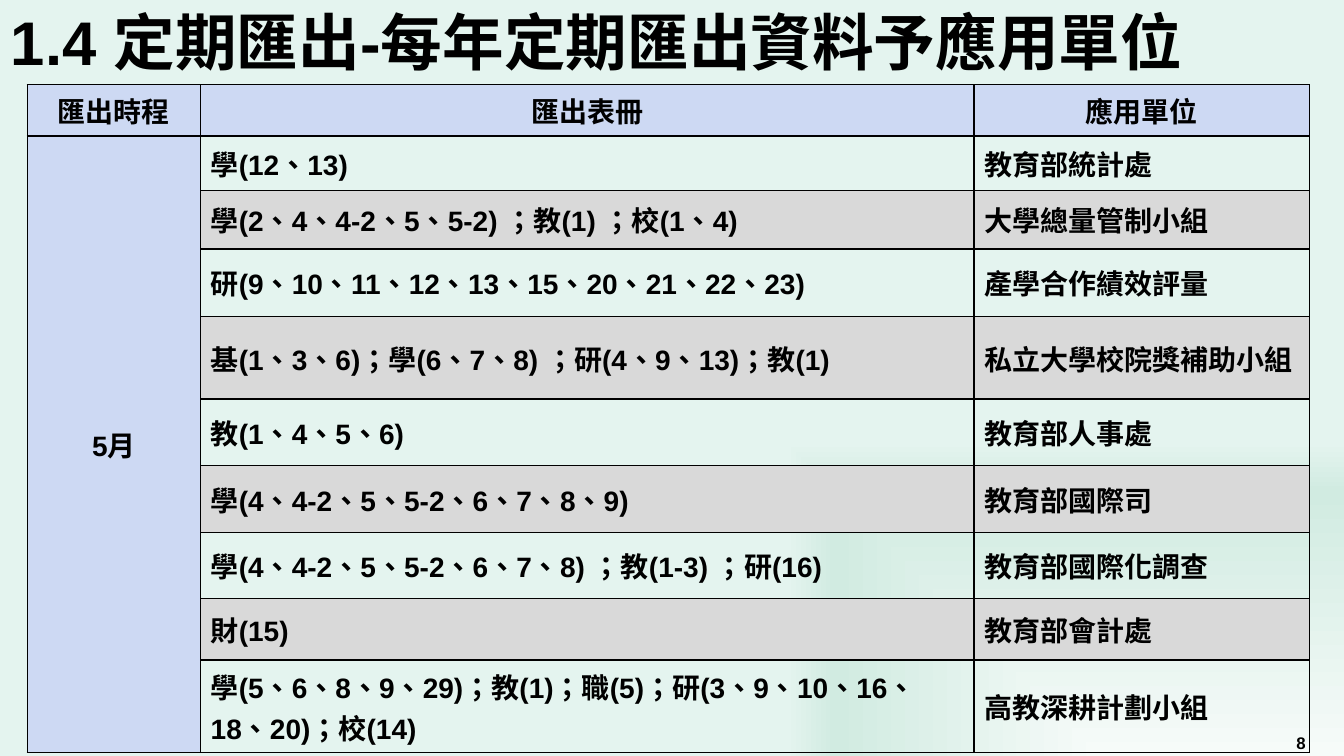
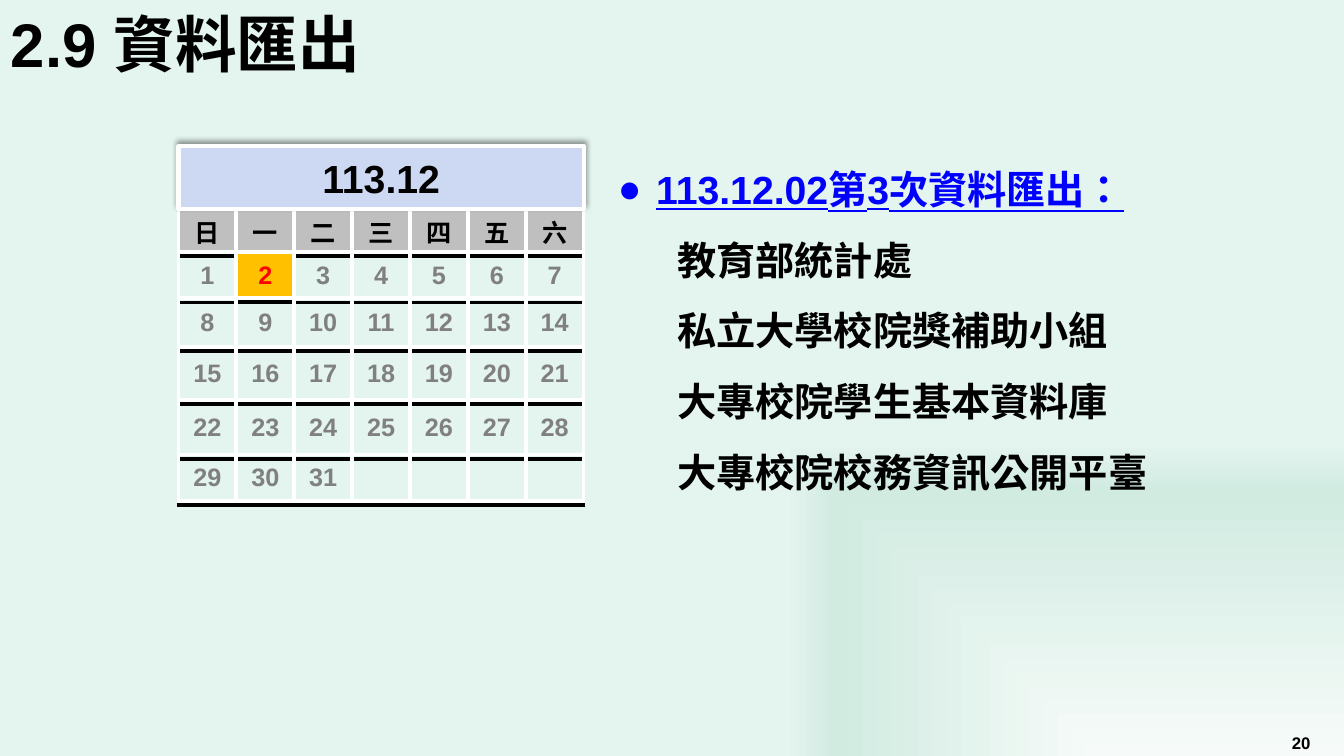
from lxml import etree
from pptx import Presentation
from pptx.dml.color import RGBColor
from pptx.enum.shapes import MSO_SHAPE
from pptx.enum.text import MSO_ANCHOR, MSO_AUTO_SIZE, PP_ALIGN
from pptx.oxml import parse_xml
from pptx.oxml.ns import qn
from pptx.util import Inches, Pt

CENTER, LEFT = PP_ALIGN.CENTER, PP_ALIGN.LEFT
MIDDLE, TOP = MSO_ANCHOR.MIDDLE, MSO_ANCHOR.TOP
GROW = MSO_AUTO_SIZE.SHAPE_TO_FIT_TEXT
RECTANGLE = MSO_SHAPE.RECTANGLE

LATIN, CJK = "Arial", "Noto Sans CJK SC"
BLACK, WHITE, BLUE, RED = "000000", "FFFFFF", "0000FF", "FF0000"
LAVENDER, BAND, WEEKDAY, DAY, MARKED = "CDD9F3", "D9D9D9", "BFBFBF", "808080", "FFC000"
GRADIENT = [(0, "F6FBF9"), (70, "D1EBE1"), (83, "E4F4EF"), (100, "E4F4EF")]
NO_STYLE = "{2D5ABB26-0587-4C30-8999-92F81FD0307C}"
XMLNS = 'xmlns:a="http://schemas.openxmlformats.org/drawingml/2006/main"'
DAY_INSETS = (0.01, 0.01, 0.01, 0)

EXPORTS = [
    ("學(12、13)", "教育部統計處"),
    ("學(2、4、4-2、5、5-2) ；教(1) ；校(1、4)", "大學總量管制小組"),
    ("研(9、10、11、12、13、15、20、21、22、23)", "產學合作績效評量"),
    ("基(1、3、6)；學(6、7、8) ；研(4、9、13)；教(1)", "私立大學校院獎補助小組"),
    ("教(1、4、5、6)", "教育部人事處"),
    ("學(4、4-2、5、5-2、6、7、8、9)", "教育部國際司"),
    ("學(4、4-2、5、5-2、6、7、8) ；教(1-3) ；研(16)", "教育部國際化調查"),
    ("財(15)", "教育部會計處"),
    ("學(5、6、8、9、29)；教(1)；職(5)；研(3、9、10、16、18、20)；校(14)", "高教深耕計劃小組"),
]
RECIPIENTS = ["教育部統計處", "私立大學校院獎補助小組", "大專校院學生基本資料庫", "大專校院校務資訊公開平臺"]


def rgb(value):
    return RGBColor.from_string(value)


def write(paragraph, text, size=20, color=BLACK, font=LATIN, align=LEFT, spacing=None, underline=False):
    paragraph.alignment = align
    if spacing:
        paragraph.line_spacing = spacing
    run = paragraph.add_run()
    run.text = text
    run.font.size = Pt(size)
    run.font.bold = True
    run.font.underline = underline
    run.font.name = font
    run.font.color.rgb = rgb(color)
    properties = run.font._element
    properties.set("lang", "zh-TW")
    properties.find(qn("a:latin")).addnext(parse_xml(f'<a:ea {XMLNS} typeface="{CJK}"/>'))


def shadow_xml(blur, distance, direction, alpha):
    return (f'<a:outerShdw {XMLNS} blurRad="{Pt(blur)}" dist="{Pt(distance)}" dir="{direction * 60000}" '
            f'algn="ctr" rotWithShape="0"><a:srgbClr val="{BLACK}"><a:alpha val="{alpha * 1000}"/>'
            '</a:srgbClr></a:outerShdw>')


class Deck:
    def __init__(self):
        self.prs = Presentation()
        self.prs.slide_width, self.prs.slide_height = Inches(13.33), Inches(7.5)
        self.slide = None
        self.paint_background()

    def paint_background(self):
        master = self.prs.slide_master
        master.background.fill.solid()
        solid = master.element.find(".//" + qn("p:bgPr")).find(qn("a:solidFill"))
        stops = "".join(f'<a:gs pos="{at * 1000}"><a:srgbClr val="{color}"/></a:gs>' for at, color in GRADIENT)
        solid.getparent().replace(solid, parse_xml(
            f'<a:gradFill {XMLNS} rotWithShape="1"><a:gsLst>{stops}</a:gsLst><a:path path="rect">'
            '<a:fillToRect l="100000" t="100000"/></a:path></a:gradFill>'))

    def add_slide(self, title, number, title_top):
        self.slide = self.prs.slides.add_slide(self.prs.slide_layouts[6])
        write(self.text_frame(0.01, title_top, 13.32, 0.67, MIDDLE).paragraphs[0], title, size=44, spacing=0.9)
        write(self.text_frame(12.48, 7.22, 0.85, 0.28).paragraphs[0], number, size=12, align=CENTER)

    def text_frame(self, left, top, width, height, anchor=TOP):
        box = self.slide.shapes.add_textbox(Inches(left), Inches(top), Inches(width), Inches(height))
        box.text_frame.word_wrap = True
        box.text_frame.vertical_anchor = anchor
        return box.text_frame

    def bullet_list(self, left, top, width, height, heading, items):
        frame = self.text_frame(left, top, width, height)
        frame.auto_size = GROW
        first = frame.paragraphs[0]
        self.indent(first, 0.38, -0.38)
        properties = first._p.get_or_add_pPr()
        etree.SubElement(properties, qn("a:buFont")).set("typeface", LATIN)
        etree.SubElement(properties, qn("a:buChar")).set("char", "●")
        write(first, heading, size=28, color=BLUE, spacing=1.5, underline=True)
        for item in items:
            paragraph = frame.add_paragraph()
            self.indent(paragraph, 0.59, 0)
            write(paragraph, item, size=28, spacing=1.5)

    def indent(self, paragraph, margin, first_line):
        properties = paragraph._p.get_or_add_pPr()
        properties.set("marL", str(Inches(margin)))
        properties.set("indent", str(Inches(first_line)))

    def banner(self, left, top, width, height, text):
        shape = self.slide.shapes.add_shape(RECTANGLE, Inches(left), Inches(top), Inches(width), Inches(height))
        shape.fill.solid()
        shape.fill.fore_color.rgb = rgb(LAVENDER)
        shape.line.color.rgb = rgb(WHITE)
        shape.line.width = Pt(3)
        shape.shadow.inherit = False
        shape._element.spPr.find(qn("a:effectLst")).append(parse_xml(shadow_xml(4, 3, 270, 40)))
        shape.text_frame.vertical_anchor = MIDDLE
        write(shape.text_frame.paragraphs[0], text, size=28, align=CENTER)

    def table(self, left, top, columns, rows, shadow=False):
        frame = self.slide.shapes.add_table(len(rows), len(columns), Inches(left), Inches(top),
                                            Inches(sum(columns)), Inches(sum(rows)))
        table = frame.table
        table.first_row = table.horz_banding = False
        properties = table._tbl.tblPr
        properties.find(qn("a:tableStyleId")).text = NO_STYLE
        if shadow:
            properties.insert(0, parse_xml(
                f'<a:effectLst {XMLNS}>{shadow_xml(0, 3, 90, 100)}</a:effectLst>'))
        for column, width in zip(table.columns, columns):
            column.width = Inches(width)
        for row, height in zip(table.rows, rows):
            row.height = Inches(height)
        return table

    def cell(self, cell, text="", fill=None, border=BLACK, border_width=1, insets=(0.1, 0.05, 0.1, 0.05), **style):
        cell.vertical_anchor = MIDDLE
        cell.margin_left, cell.margin_top, cell.margin_right, cell.margin_bottom = map(Inches, insets)
        if fill:
            cell.fill.solid()
            cell.fill.fore_color.rgb = rgb(fill)
        else:
            cell.fill.background()
        for position, side in enumerate(("lnL", "lnR", "lnT", "lnB")):
            cell._tc.get_or_add_tcPr().insert(position, parse_xml(
                f'<a:{side} {XMLNS} w="{Pt(border_width)}"><a:solidFill><a:srgbClr val="{border}"/>'
                f'</a:solidFill></a:{side}>'))
        if text:
            write(cell.text_frame.paragraphs[0], text, **style)


def export_slide(deck):
    deck.add_slide("1.4 定期匯出-每年定期匯出資料予應用單位", "8", 0.12)
    table = deck.table(0.27, 0.84, [1.72, 7.67, 3.33],
                       [0.51, 0.54, 0.58, 0.67, 0.82, 0.66, 0.66, 0.66, 0.61, 0.92])
    for column, heading in enumerate(("匯出時程", "匯出表冊", "應用單位")):
        deck.cell(table.cell(0, column), heading, LAVENDER, align=CENTER)
    for row, entry in enumerate(EXPORTS, 1):
        deck.cell(table.cell(row, 0), "5月" if row == 1 else "", LAVENDER, align=CENTER)
        for column, text in enumerate(entry, 1):
            deck.cell(table.cell(row, column), text, None if row % 2 else BAND)
    table.cell(1, 0).merge(table.cell(len(EXPORTS), 0))


def calendar_slide(deck):
    deck.add_slide("2.9 資料匯出", "20", 0.14)
    deck.bullet_list(6.03, 1.36, 5.59, 3.64, "113.12.02第3次資料匯出：", RECIPIENTS)
    calendar = deck.table(1.77, 2.07, [4.02 / 7] * 7, [0.43, 0.46, 0.48, 0.53, 0.54, 0.46], shadow=True)
    grid = dict(border=WHITE, border_width=3, size=18, align=CENTER)
    for column, weekday in enumerate("日一二三四五六"):
        deck.cell(calendar.cell(0, column), weekday, WEEKDAY, font=CJK, **grid)
    for index in range(35):
        day = index + 1
        export_day = day == 2
        deck.cell(calendar.cell(1 + index // 7, index % 7), str(day) if day <= 31 else "",
                  MARKED if export_day else None, insets=DAY_INSETS,
                  color=RED if export_day else DAY, **grid)
    deck.banner(1.77, 1.45, 4.02, 0.62, "113.12")


def main():
    deck = Deck()
    export_slide(deck)
    calendar_slide(deck)
    deck.prs.save("out.pptx")


if __name__ == "__main__":
    main()
